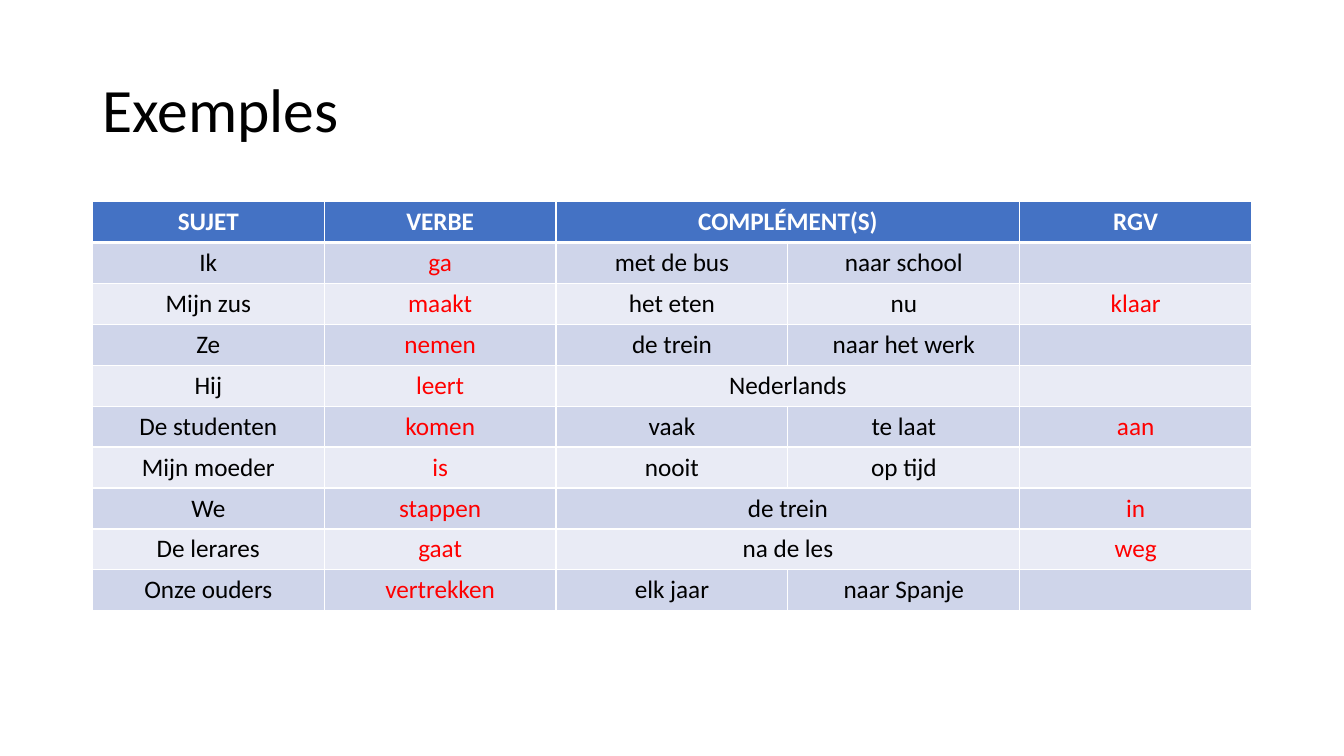
from dataclasses import dataclass

from lxml import etree
from pptx import Presentation
from pptx.dml.color import RGBColor
from pptx.enum.text import MSO_ANCHOR, MSO_AUTO_SIZE, PP_ALIGN
from pptx.oxml.ns import qn
from pptx.util import Pt

LEFT, CENTER = PP_ALIGN.LEFT, PP_ALIGN.CENTER
MIDDLE, NO_FIT = MSO_ANCHOR.MIDDLE, MSO_AUTO_SIZE.NONE

TITLE = "Exemples"
# None joins a cell to the one on its left.
ROWS = [
    ("SUJET", "VERBE", "COMPLÉMENT(S)", None, "RGV"),
    ("Ik", "ga", "met de bus", "naar school", ""),
    ("Mijn zus", "maakt", "het eten", "nu", "klaar"),
    ("Ze", "nemen", "de trein", "naar het werk", ""),
    ("Hij", "leert", "Nederlands", None, ""),
    ("De studenten", "komen", "vaak", "te laat", "aan"),
    ("Mijn moeder", "is", "nooit", "op tijd", ""),
    ("We", "stappen", "de trein", None, "in"),
    ("De lerares", "gaat", "na de les", None, "weg"),
    ("Onze ouders", "vertrekken", "elk jaar", "naar Spanje", ""),
]
VERB_COLS = (1, 4)

PX = 9525
SLIDE = (1280, 720)
TITLE_BOX = (88, 38, 1104, 139)
GRID_LEFT, GRID_TOP, GRID_WIDTH, ROW_HEIGHT = 88, 192, 1104, 39


@dataclass(frozen=True)
class Theme:
    font: str = "Calibri"
    title: int = 44
    body: int = 18
    ink: str = "000000"
    verb: str = "FF0000"
    white: str = "FFFFFF"
    head: str = "4472C4"
    bands: tuple = ("CFD5EA", "E9EBF5")
    line: int = 1
    rule: int = 3


THEME = Theme()


def write(para, text, size, color, bold=False):
    run = para.add_run()
    run.text = text
    run.font.name = THEME.font
    run.font.size = Pt(size)
    run.font.bold = bold
    run.font.color.rgb = RGBColor.from_string(color)


def border(cell, is_head, under_head):
    """Draw white cell edges, with a thick rule below the header."""
    props = cell._tc.get_or_add_tcPr()
    for spot, side in enumerate("LRTB"):
        thick = (is_head and side == "B") or (under_head and side == "T")
        width = THEME.rule if thick else THEME.line
        edge = etree.Element(qn(f"a:ln{side}"), w=str(Pt(width)))
        fill = etree.SubElement(edge, qn("a:solidFill"))
        etree.SubElement(fill, qn("a:srgbClr"), val=THEME.white)
        props.insert(spot, edge)


def add_title(slide):
    title = slide.shapes.title
    title.left, title.top, title.width, title.height = (n * PX for n in TITLE_BOX)
    frame = title.text_frame
    frame.auto_size = NO_FIT
    frame.word_wrap = True
    frame.vertical_anchor = MIDDLE
    para = frame.paragraphs[0]
    para.alignment = LEFT
    para.line_spacing = 0.9
    write(para, TITLE, THEME.title, THEME.ink)


def add_grid(slide):
    count = len(ROWS[0])
    table = slide.shapes.add_table(
        len(ROWS), count, GRID_LEFT * PX, GRID_TOP * PX,
        GRID_WIDTH * PX, len(ROWS) * ROW_HEIGHT * PX).table
    for col in table.columns:
        col.width = GRID_WIDTH * PX // count
    for r, row in enumerate(ROWS):
        table.rows[r].height = ROW_HEIGHT * PX
        is_head = r == 0
        back = THEME.head if is_head else THEME.bands[(r - 1) % 2]
        for c, text in enumerate(row):
            cell = table.cell(r, c)
            cell.fill.solid()
            cell.fill.fore_color.rgb = RGBColor.from_string(back)
            border(cell, is_head, r == 1)
            if text is None:
                table.cell(r, c - 1).merge(cell)
            elif text:
                para = cell.text_frame.paragraphs[0]
                para.alignment = CENTER
                ink = THEME.verb if c in VERB_COLS else THEME.ink
                write(para, text, THEME.body, THEME.white if is_head else ink, is_head)


def main():
    deck = Presentation()
    deck.slide_width, deck.slide_height = (n * PX for n in SLIDE)
    slide = deck.slides.add_slide(deck.slide_layouts.get_by_name("Title Only"))
    add_title(slide)
    add_grid(slide)
    deck.save("out.pptx")


if __name__ == "__main__":
    main()
